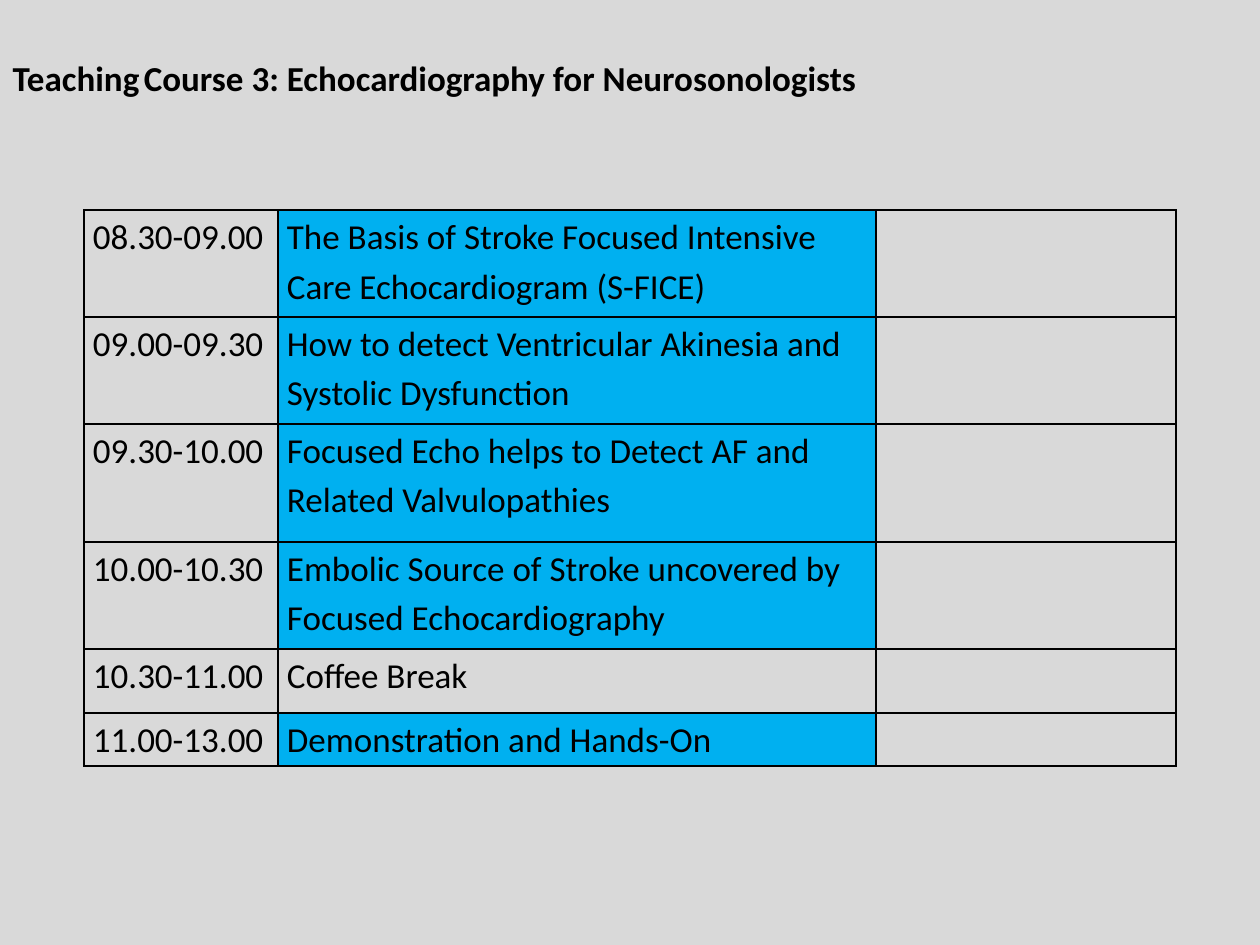
from lxml import etree
from pptx import Presentation
from pptx.dml.color import RGBColor
from pptx.enum.text import MSO_ANCHOR as Anchor, MSO_AUTO_SIZE as AutoSize, PP_ALIGN as Align
from pptx.oxml.ns import qn
from pptx.util import Emu, Pt

PX = 914400 / 126
BLACK = RGBColor(0x00, 0x00, 0x00)
GREY = RGBColor(0xD9, 0xD9, 0xD9)
BLUE = RGBColor(0x00, 0xB0, 0xF0)


def px(length):
    return Emu(round(length * PX))


class CourseSlide:
    font_name = "Calibri"
    text_size = 20
    border_width = 1

    def __init__(self, presentation):
        self.slide = presentation.slides.add_slide(presentation.slide_layouts[5])
        self.slide.background.fill.solid()
        self.slide.background.fill.fore_color.rgb = GREY

    def style(self, font, size=text_size, bold=False):
        font.name, font.size, font.bold = self.font_name, Pt(size), bold
        font.color.rgb = BLACK

    def title(self, left, top, width, height, runs):
        shape = self.slide.shapes.title
        shape.left, shape.top, shape.width, shape.height = map(px, (left, top, width, height))
        frame = shape.text_frame
        frame.auto_size = AutoSize.NONE
        frame.word_wrap = True
        frame.vertical_anchor = Anchor.MIDDLE
        paragraph = frame.paragraphs[0]
        paragraph.alignment = Align.LEFT
        for text, size, bold in runs:
            run = paragraph.add_run()
            run.text = text
            self.style(run.font, size, bold)

    def borders(self, cell):
        properties = cell._tc.get_or_add_tcPr()
        for index, side in enumerate(("lnL", "lnR", "lnT", "lnB")):
            line = etree.Element(qn(f"a:{side}"), w=str(Pt(self.border_width)))
            fill = etree.SubElement(line, qn("a:solidFill"))
            etree.SubElement(fill, qn("a:srgbClr"), val=str(BLACK))
            properties.insert(index, line)

    def cell(self, cell, text, color):
        cell.margin_left = cell.margin_right = px(9)
        cell.margin_top = cell.margin_bottom = 0
        if color is None:
            cell.fill.background()
        else:
            cell.fill.solid()
            cell.fill.fore_color.rgb = color
        self.borders(cell)
        paragraph = cell.text_frame.paragraphs[0]
        paragraph.text = text
        paragraph.line_spacing = 1.15
        self.style(paragraph.font)

    def table(self, left, top, widths, heights, rows):
        frame = self.slide.shapes.add_table(
            len(heights), len(widths), px(left), px(top), px(sum(widths)), px(sum(heights)))
        table = frame.table
        table.first_row = table.horz_banding = False
        for column, width in zip(table.columns, widths):
            column.width = px(width)
        for row, height, (time, topic, color) in zip(table.rows, heights, rows):
            row.height = px(height)
            contents = ((time, None), (topic, color), ("", None))
            for cell, (text, fill) in zip(row.cells, contents):
                self.cell(cell, text, fill)


def main():
    presentation = Presentation()
    presentation.slide_width, presentation.slide_height = px(1260), px(945)
    course = CourseSlide(presentation)

    # Course title
    course.title(0, 50, 903, 55, [
        ("Teaching", 20, True),
        (" ", 11, False),
        ("Course 3: Echocardiography for Neurosonologists", 20, True),
    ])

    # Timetable: talks are blue, the break is not
    course.table(84, 210, (194, 598, 300), (107, 107, 118, 107, 64, 53), [
        ("08.30-09.00", "The Basis of Stroke Focused Intensive Care Echocardiogram (S-FICE)", BLUE),
        ("09.00-09.30", "How to detect Ventricular Akinesia and Systolic Dysfunction", BLUE),
        ("09.30-10.00", "Focused Echo helps to Detect AF and Related Valvulopathies", BLUE),
        ("10.00-10.30", "Embolic Source of Stroke uncovered by Focused Echocardiography", BLUE),
        ("10.30-11.00", "Coffee Break", None),
        ("11.00-13.00", "Demonstration and Hands-On", BLUE),
    ])

    presentation.save("out.pptx")


if __name__ == "__main__":
    main()
